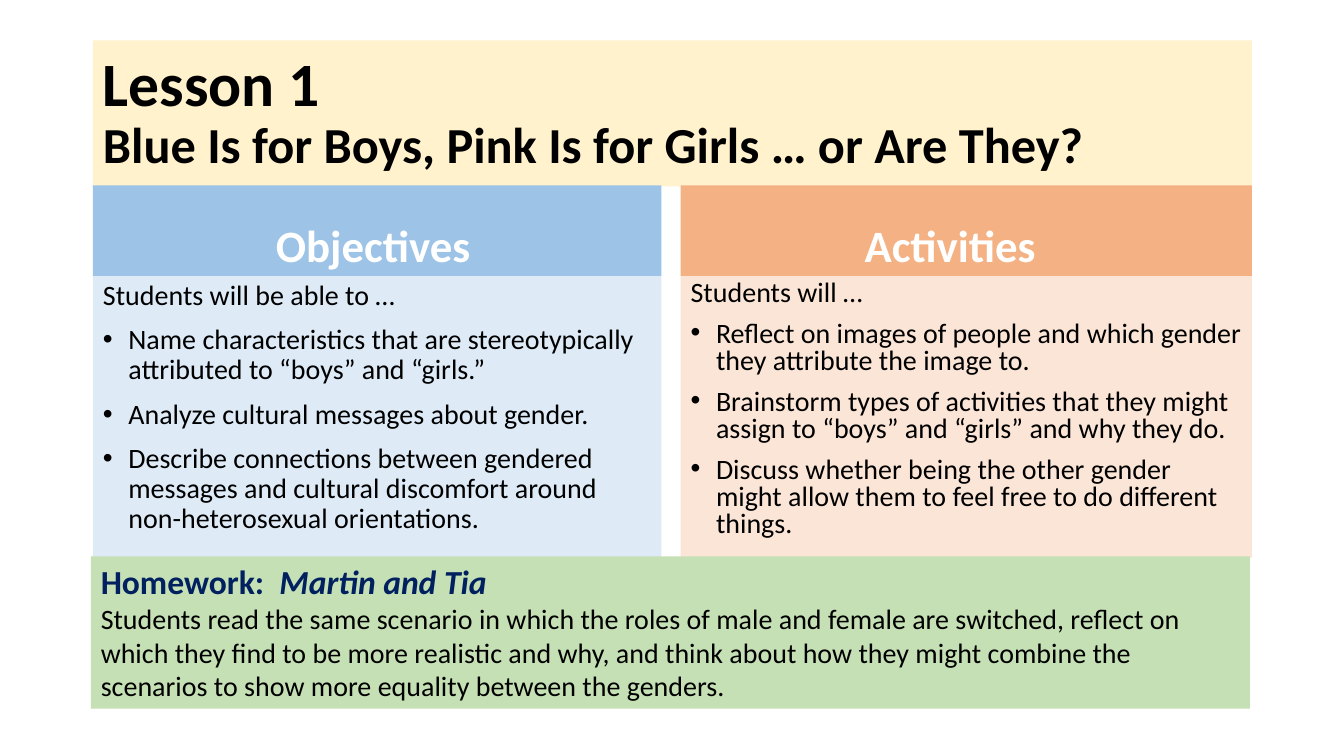
from lxml import etree
from pptx import Presentation
from pptx import util as u
from pptx.dml.color import RGBColor
from pptx.enum import shapes, text
from pptx.oxml.ns import qn

COLORS = {
    "title": "FFF2CC",
    "homework": "C5E0B4",
    "navy": "002060",
    "black": "000000",
    "white": "FFFFFF",
}
LEFT, WIDTH = 2.34, 29.21
HEADING_TOP, HEADING_HEIGHT = 4.67, 2.29
LIST_TOP, LIST_HEIGHT = 6.96, 7.09
INDENT = u.Cm(0.64)

# left, width, extra right inset of the heading, line spacing, colours, texts
COLUMNS = [
    (LEFT, 14.33, 0.2, 0.9, "9DC3E6", "DEEBF7", "Objectives", [
        "Students will be able to …",
        "Name characteristics that are stereotypically attributed to “boys” and “girls.”",
        "Analyze cultural messages about gender.",
        "Describe connections between gendered messages and cultural discomfort "
        "around non-heterosexual orientations.",
    ]),
    (17.15, 14.4, 0.81, 0.8, "F4B183", "FBE5D6", "Activities", [
        "Students will …",
        "Reflect on images of people and which gender they attribute the image to.",
        "Brainstorm types of activities that they might assign to “boys” and “girls” "
        "and why they do.",
        "Discuss whether being the other gender might allow them to feel free to do "
        "different things.",
    ]),
]


def set_panel(shape, left, top, width, height, fill, anchor):
    """Place a shape, given in centimetres, and fill it with one colour."""
    shape.left, shape.top = u.Cm(left), u.Cm(top)
    shape.width, shape.height = u.Cm(width), u.Cm(height)
    shape.fill.solid()
    shape.fill.fore_color.rgb = RGBColor.from_string(fill)
    frame = shape.text_frame
    frame.word_wrap = True
    frame.auto_size = text.MSO_AUTO_SIZE.NONE
    frame.vertical_anchor = anchor
    return frame


def format_run(run, size, color="black", bold=False, italic=False):
    run.font.name = "Calibri"
    run.font.size = u.Pt(size)
    run.font.bold = bold
    run.font.italic = italic
    run.font.color.rgb = RGBColor.from_string(COLORS[color])


presentation = Presentation()
presentation.slide_width = u.Cm(33.87)
presentation.slide_height = u.Cm(19.05)
comparison_layout = presentation.slide_layouts[4]
slide = presentation.slides.add_slide(comparison_layout)

# Title
frame = set_panel(slide.shapes.title, LEFT, 1.02, WIDTH, 3.68,
                  COLORS["title"], text.MSO_ANCHOR.MIDDLE)
frame.text = "Lesson 1\vBlue Is for Boys, Pink Is for Girls … or Are They?"
paragraph = frame.paragraphs[0]
paragraph.alignment = text.PP_ALIGN.LEFT
paragraph.line_spacing = 0.9
for run, size in zip(paragraph.runs, (44, 36)):
    format_run(run, size, bold=True)

# Objectives and activities
for number, column in enumerate(COLUMNS):
    left, width, inset, spacing, heading_fill, list_fill, heading, lines = column

    frame = set_panel(slide.placeholders[2 * number + 1], left, HEADING_TOP, width,
                      HEADING_HEIGHT, heading_fill, text.MSO_ANCHOR.BOTTOM)
    frame.margin_right = u.Cm(0.25 + inset)
    frame.text = heading
    paragraph = frame.paragraphs[0]
    paragraph.alignment = text.PP_ALIGN.CENTER
    paragraph.space_before = u.Pt(0)
    format_run(paragraph.runs[0], 32, "white", bold=True)

    frame = set_panel(slide.placeholders[2 * number + 2], left, LIST_TOP, width,
                      LIST_HEIGHT, list_fill, text.MSO_ANCHOR.TOP)
    frame.text = "\n".join(lines)
    for position, paragraph in enumerate(frame.paragraphs):
        paragraph.line_spacing = spacing
        paragraph.space_before = u.Pt(10)
        format_run(paragraph.runs[0], 20)
        properties = paragraph._p.get_or_add_pPr()
        if position == 0:
            properties.set("marL", "0")
            properties.set("indent", "0")
            etree.SubElement(properties, qn("a:buNone"))
        else:
            properties.set("marL", str(INDENT))
            properties.set("indent", str(-INDENT))
            etree.SubElement(properties, qn("a:buFont"), typeface="Arial")
            etree.SubElement(properties, qn("a:buChar"), char="•")

# Homework
homework = slide.shapes.add_shape(shapes.MSO_SHAPE.RECTANGLE, 0, 0, 0, 0)
homework.shadow.inherit = False
homework.line.fill.background()
frame = set_panel(homework, 2.29, 14.02, WIDTH, 3.84,
                  COLORS["homework"], text.MSO_ANCHOR.TOP)
heading, description = frame.paragraphs[0], frame.add_paragraph()
for words, italic in (("Homework:  ", False), ("Martin and Tia", True)):
    run = heading.add_run()
    run.text = words
    format_run(run, 24, "navy", bold=True, italic=italic)
description.text = (
    "Students read the same scenario in which the roles of male and female are "
    "switched, reflect on which they find to be more realistic and why, and think "
    "about how they might combine the scenarios to show more equality between the genders."
)
format_run(description.runs[0], 20)
for paragraph in frame.paragraphs:
    paragraph.alignment = text.PP_ALIGN.LEFT

presentation.save("out.pptx")
